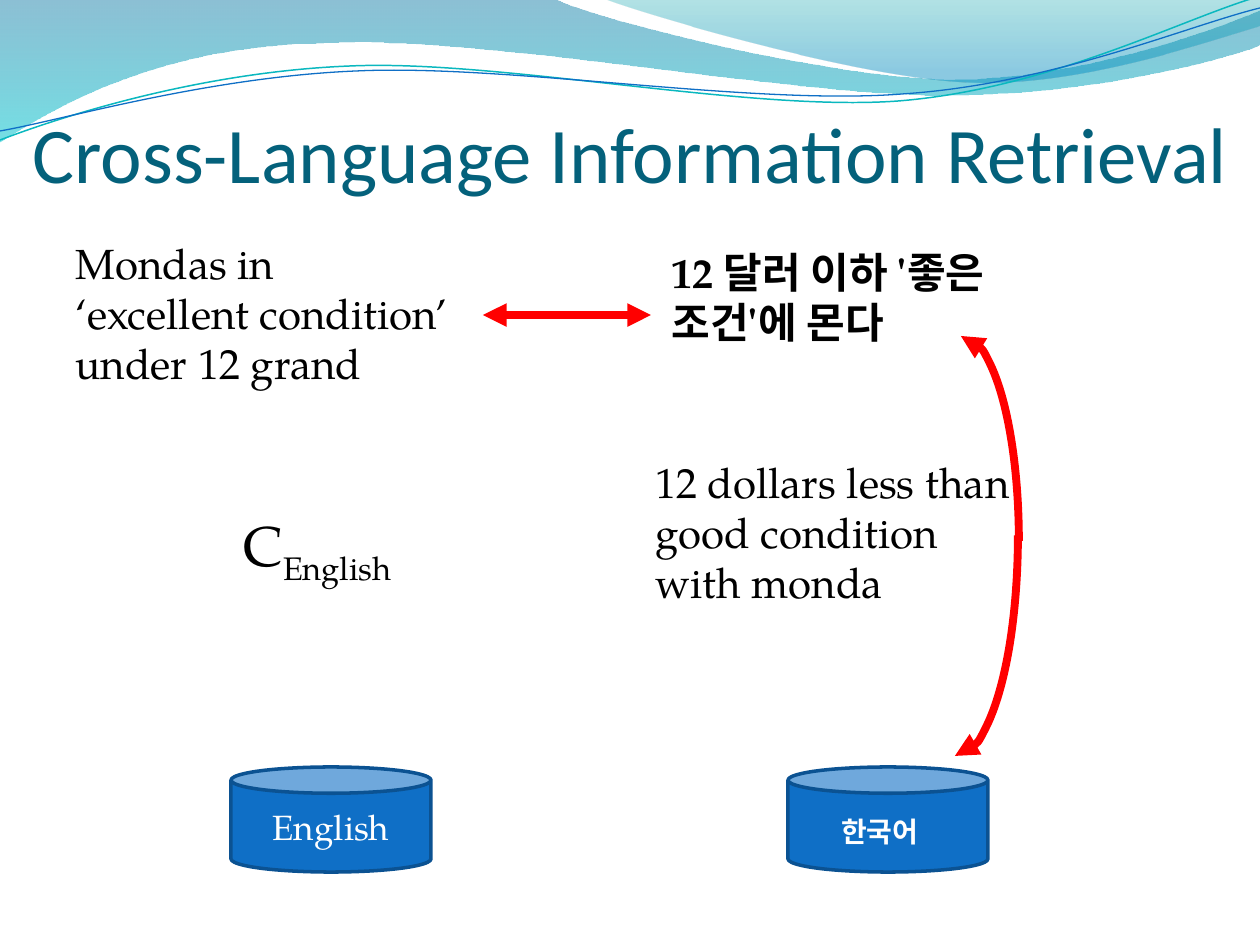
"""Build the Cross-Language Information Retrieval slide."""
from dataclasses import dataclass
from typing import Optional

from lxml.etree import SubElement
from pptx import Presentation
from pptx.dml.color import RGBColor
from pptx.enum.shapes import MSO_CONNECTOR, MSO_SHAPE
from pptx.enum.text import MSO_ANCHOR, MSO_AUTO_SIZE, PP_ALIGN
from pptx.oxml.ns import qn
from pptx.util import Emu, Pt

EMU_PER_PX = 914400 / 126
SERIF = "TeX Gyre Pagella"
SANS = "Calibri"
BLACK = RGBColor(0x00, 0x00, 0x00)
WHITE = RGBColor(0xFF, 0xFF, 0xFF)
RED = RGBColor(0xFF, 0x00, 0x00)
TITLE_TEAL = RGBColor(0x04, 0x61, 0x7B)
BLUE = RGBColor(0x0F, 0x6F, 0xC6)
DARK_BLUE = RGBColor(0x0B, 0x52, 0x92)
AQUA = RGBColor(0x0A, 0xB8, 0xBF)
WAVE_BLUE = RGBColor(0x00, 0x74, 0xA1)
WAVE_CYAN = RGBColor(0x00, 0xC6, 0xCF)
WAVE_TEAL = RGBColor(0x00, 0xA1, 0xA9)
WAVE_SKY = RGBColor(0x00, 0x8B, 0xBF)


@dataclass(frozen=True)
class Stop:
    position: float
    color: RGBColor
    opacity: int


@dataclass(frozen=True)
class Wave:
    start: tuple
    segments: tuple
    stops: tuple = ()
    line: Optional[RGBColor] = None
    width: float = 0


@dataclass(frozen=True)
class Label:
    text: str
    area: tuple
    size: int = 24
    color: RGBColor = BLACK
    bold: bool = False
    font: str = SERIF
    subscript: str = ""
    wrap: bool = True


@dataclass(frozen=True)
class Arc:
    area: tuple
    flipped: bool


WAVES = (
    Wave((0, 0), (
        ((554, -1),),
        ((600, 21), (837, 79), (955, 79)),
        ((1075, 79), (1207, 33), (1260, 11)),
        ((1261, 45),),
        ((1239, 55), (1096, 96), (940, 95)),
        ((784, 95), (481, 35), (324, 43)),
        ((163, 45), (58, 105), (-1, 142)),
    ), stops=(Stop(0, WAVE_BLUE, 45), Stop(1, WAVE_CYAN, 55))),
    Wave((604, -1), (
        ((641, 14), (859, 78), (969, 82)),
        ((1079, 87), (1211, 40), (1260, 26)),
        ((1260, 0),),
    ), stops=(Stop(0, WAVE_TEAL, 30), Stop(0.8, WAVE_SKY, 45))),
    Wave((0, 140), (
        ((60, 117), (199, 72), (349, 66)),
        ((498, 59), (747, 112), (898, 101)),
        ((1049, 89), (1182, 19), (1257, -3)),
    ), line=AQUA, width=0.85),
    Wave((0, 131), (
        ((59, 121), (207, 77), (357, 71)),
        ((508, 64), (752, 106), (903, 94)),
        ((1053, 84), (1187, 26), (1260, 8)),
    ), line=BLUE, width=0.75),
)
TITLE = Label("Cross-Language Information Retrieval", (0, 95, 1260, 104), 45, TITLE_TEAL, font=SANS)
ENGLISH_CAN = Label("English", (231, 767, 200, 105), 20, WHITE)
KOREAN_CAN = Label("", (788, 767, 200, 105), 20, WHITE)
LABELS = (
    Label("C", (231, 504, 183, 81), 32, subscript="English", wrap=False),
    Label("한국어", (829, 808, 116, 47), 16, WHITE, bold=True),
    Label("Mondas in ‘excellent condition’ under 12 grand", (63, 231, 399, 165)),
    Label("12 달러 이하 '좋은 조건'에 몬다", (659, 240, 399, 115), bold=True),
    Label("12 dollars less than good condition with monda", (643, 450, 389, 165)),
)
ARCS = (Arc((903, 336, 116, 410), False), Arc((892, 315, 126, 441), True))


def px(*lengths: int) -> tuple:
    """Turn pixel lengths into EMU."""
    return tuple(Emu(round(length * EMU_PER_PX)) for length in lengths)


def bend(shape, segments: tuple) -> None:
    """Join each three straight steps of a cubic segment into one curve."""
    steps = iter(list(shape.element.spPr.iter(qn("a:lnTo"))))
    for segment in segments:
        parts = [next(steps) for _ in segment]
        if len(parts) == 3:
            curve = parts[0].makeelement(qn("a:cubicBezTo"))
            parts[0].addprevious(curve)
            for part in parts:
                curve.append(part[0])
                part.getparent().remove(part)


def draw_wave(page, wave: Wave) -> None:
    """Draw a gradient band or a thin curve."""
    points = [px(*point) for segment in wave.segments for point in segment]
    builder = page.shapes.build_freeform(*px(*wave.start))
    builder.add_line_segments(points, close=bool(wave.stops))
    shape = builder.convert_to_shape()
    bend(shape, wave.segments)
    shape.shadow.inherit = False
    if not wave.stops:
        shape.fill.background()
        set_line(shape, wave.line, wave.width)
        return
    shape.line.fill.background()
    shape.fill.gradient()
    shape.fill.gradient_angle = 270
    for target, stop in zip(shape.fill.gradient_stops, wave.stops):
        target.position = stop.position
        target.color.rgb = stop.color
    for color, stop in zip(shape.element.spPr.iter(qn("a:srgbClr")), wave.stops):
        SubElement(color, qn("a:alpha"), val=str(stop.opacity * 1000))


def set_line(shape, color: RGBColor, width: float, ends: tuple = ()) -> None:
    """Set line colour, width and triangle ends."""
    shape.line.color.rgb = color
    shape.line.width = Pt(width)
    for end in ends:
        SubElement(shape.line._get_or_add_ln(), qn(f"a:{end}"), type="triangle")


def write(box, label: Label, align: PP_ALIGN, anchor: MSO_ANCHOR) -> None:
    """Write a label into a shape."""
    frame = box.text_frame
    for name, value in {"word_wrap": label.wrap, "vertical_anchor": anchor}.items():
        setattr(frame, name, value)
    para = frame.paragraphs[0]
    para.alignment = align
    for text in filter(None, (label.text, label.subscript)):
        span = para.add_run()
        span.text = text
        formats = {"name": label.font, "size": Pt(label.size), "bold": label.bold}
        for name, value in formats.items():
            setattr(span.font, name, value)
        span.font.color.rgb = label.color
    if label.subscript:
        span.font._element.set("baseline", "-25000")


def draw_label(page, label: Label) -> None:
    """Draw a text box that grows with its text."""
    box = page.shapes.add_textbox(*px(*label.area))
    write(box, label, PP_ALIGN.LEFT, MSO_ANCHOR.TOP)
    box.text_frame.auto_size = MSO_AUTO_SIZE.SHAPE_TO_FIT_TEXT


def draw_title(page, label: Label) -> None:
    """Draw the title, resting on the bottom of its box."""
    box = page.shapes.add_textbox(*px(*label.area))
    write(box, label, PP_ALIGN.CENTER, MSO_ANCHOR.BOTTOM)
    for side in ("left", "right", "bottom"):
        setattr(box.text_frame, f"margin_{side}", 0)


def draw_can(page, label: Label) -> None:
    """Draw a collection cylinder."""
    can = page.shapes.add_shape(MSO_SHAPE.CAN, *px(*label.area))
    can.shadow.inherit = False
    can.fill.solid()
    can.fill.fore_color.rgb = BLUE
    set_line(can, DARK_BLUE, 2)
    write(can, label, PP_ALIGN.CENTER, MSO_ANCHOR.MIDDLE)


def draw_arc(page, arc: Arc) -> None:
    """Draw a quarter arc with an arrowhead at its start."""
    shape = page.shapes.add_shape(MSO_SHAPE.ARC, *px(*arc.area))
    shape.shadow.inherit = False
    shape.fill.background()
    set_line(shape, RED, 4.5, ("headEnd",))
    if arc.flipped:
        shape.element.spPr.xfrm.set("flipV", "1")


def draw_double_arrow(page, ends: tuple) -> None:
    """Draw a straight arrow with two heads."""
    arrow = page.shapes.add_connector(MSO_CONNECTOR.STRAIGHT, *px(*ends))
    set_line(arrow, RED, 4.5, ("headEnd", "tailEnd"))
    SubElement(arrow._element.spPr, qn("a:effectLst"))


def main() -> None:
    """Build and save the deck."""
    deck = Presentation()
    deck.slide_width, deck.slide_height = px(1260, 945)
    page = deck.slides.add_slide(deck.slide_layouts[6])
    for wave in WAVES:
        draw_wave(page, wave)
    draw_title(page, TITLE)
    for can in (ENGLISH_CAN, KOREAN_CAN):
        draw_can(page, can)
    draw_double_arrow(page, (483, 315, 651, 315))
    for arc in ARCS:
        draw_arc(page, arc)
    for label in LABELS:
        draw_label(page, label)
    deck.save("out.pptx")


if __name__ == "__main__":
    main()
